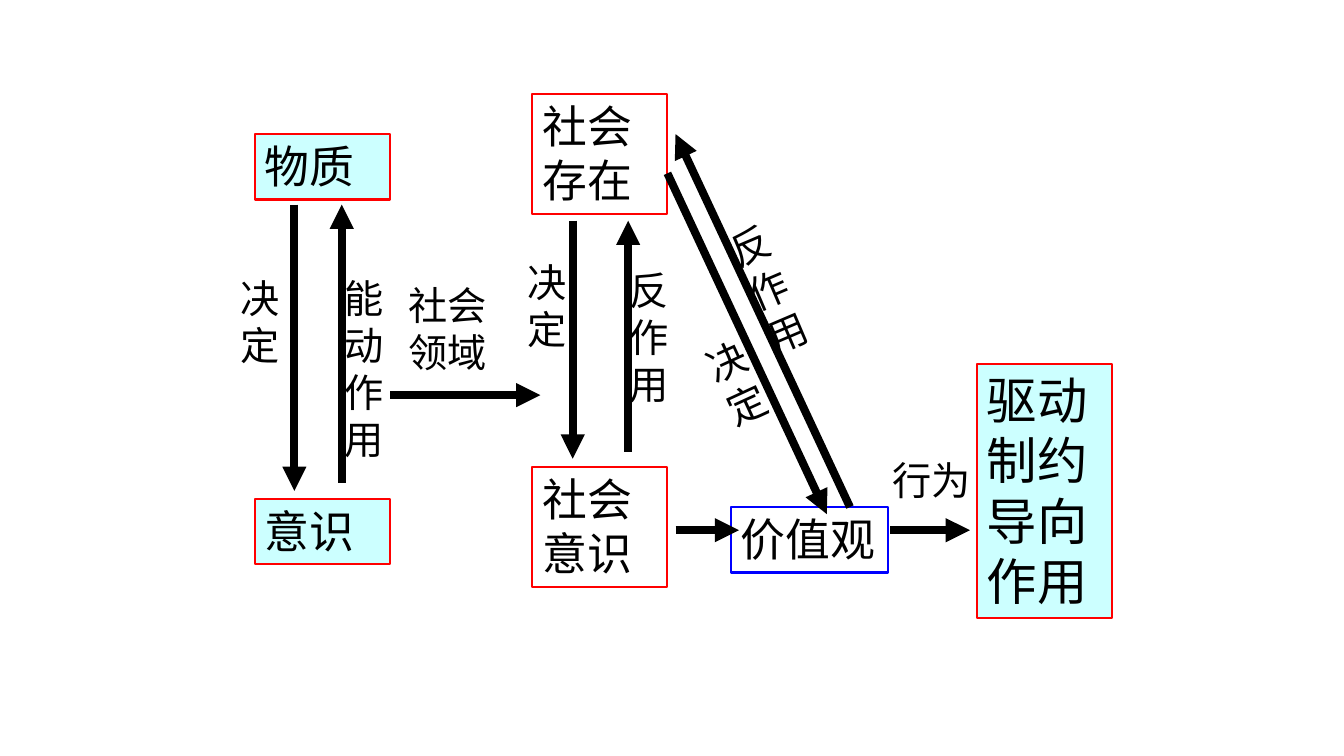
from lxml.etree import SubElement
from pptx import Presentation
from pptx.dml.color import RGBColor
from pptx.enum.shapes import MSO_CONNECTOR, MSO_SHAPE
from pptx.enum.text import MSO_ANCHOR, MSO_AUTO_SIZE, PP_ALIGN
from pptx.oxml.ns import qn
from pptx.util import Pt

EMU_PER_PX = 9144
BLACK, RED, BLUE, CYAN = "000000", "FF0000", "0000FF", "CCFFFF"


def px(length):
    """Turn a length in px into EMU."""
    return length * EMU_PER_PX


def color(hex_string):
    """Turn a hex string into a colour."""
    return RGBColor.from_string(hex_string)


class Diagram:
    """Hold the style and the slide on which the diagram is drawn."""

    font_name = "Arial"
    label_size = 28
    border_width = 1.5
    arrow_width = 5.75

    def __init__(self, slide):
        """Draw on the given slide."""
        self.slide = slide

    def set_text(self, shape, text, size, wrap=True):
        """Put left-aligned text into a shape."""
        frame = shape.text_frame
        frame.text = text
        frame.word_wrap = wrap
        frame.auto_size = MSO_AUTO_SIZE.SHAPE_TO_FIT_TEXT
        frame.vertical_anchor = MSO_ANCHOR.TOP
        for paragraph in frame.paragraphs:
            paragraph.alignment = PP_ALIGN.LEFT
            for run in paragraph.runs:
                run.font.name = self.font_name
                run.font.size = Pt(size)
                run.font.color.rgb = color(BLACK)

    def box(self, text, left, top, width, height, fill=None, border=RED, size=32, wrap=True):
        """Draw a bordered concept box."""
        shape = self.slide.shapes.add_shape(
            MSO_SHAPE.RECTANGLE, px(left), px(top), px(width), px(height))
        shape.shadow.inherit = False
        if fill:
            shape.fill.solid()
            shape.fill.fore_color.rgb = color(fill)
        else:
            shape.fill.background()
        shape.line.color.rgb = color(border)
        shape.line.width = Pt(self.border_width)
        self.set_text(shape, text, size, wrap)

    def label(self, text, left, top, width, height, rotation=0):
        """Place a relation name beside its arrow."""
        shape = self.slide.shapes.add_textbox(px(left), px(top), px(width), px(height))
        shape.rotation = rotation
        self.set_text(shape, text, self.label_size)

    def arrow(self, start_x, start_y, end_x, end_y):
        """Draw a thick arrow between two points."""
        connector = self.slide.shapes.add_connector(
            MSO_CONNECTOR.STRAIGHT, px(start_x), px(start_y), px(end_x), px(end_y))
        connector.line.color.rgb = color(BLACK)
        connector.line.width = Pt(self.arrow_width)
        properties = connector.element.spPr
        SubElement(properties.find(qn("a:ln")), qn("a:tailEnd"), type="triangle")
        SubElement(properties, qn("a:effectLst"))


def main():
    """Build the slide and save it."""
    presentation = Presentation()
    presentation.slide_width, presentation.slide_height = px(1333), px(750)
    diagram = Diagram(presentation.slides.add_slide(presentation.slide_layouts[6]))

    for text, top in (("物质", 133), ("意识", 495)):
        diagram.box(text, 253, top, 134, 65, fill=CYAN)
    for text, top in (("社会存在", 93), ("社会意识", 463)):
        diagram.box(text, 528, top, 134, 119)
    diagram.box("价值观", 725, 503, 156, 65, border=BLUE, wrap=False)
    diagram.box("驱动\n制约\n导向作用", 969, 361, 134, 252, fill=CYAN, size=36)

    for points in (
        (292, 203, 292, 487),
        (339, 479, 339, 203),
        (387, 392, 536, 392),
        (568, 219, 568, 455),
        (623, 448, 623, 219),
        (670, 526, 733, 526),
        (662, 172, 820, 510),
        (843, 503, 670, 133),
        (883, 526, 962, 526),
    ):
        diagram.arrow(*points)

    for left, top, rotation in ((229, 267, 0), (513, 251, 0), (702, 330, 335.3)):
        diagram.label("决定", left, top, 49, 103, rotation)
    for left, top, rotation in ((615, 259, 0), (733, 211, 336.8)):
        diagram.label("反作用", left, top, 63, 150, rotation)
    diagram.label("能动作用", 332, 267, 63, 197)
    diagram.label("社会领域", 395, 274, 118, 103)
    diagram.label("行为", 875, 448, 102, 57)

    presentation.save("out.pptx")


if __name__ == "__main__":
    main()
